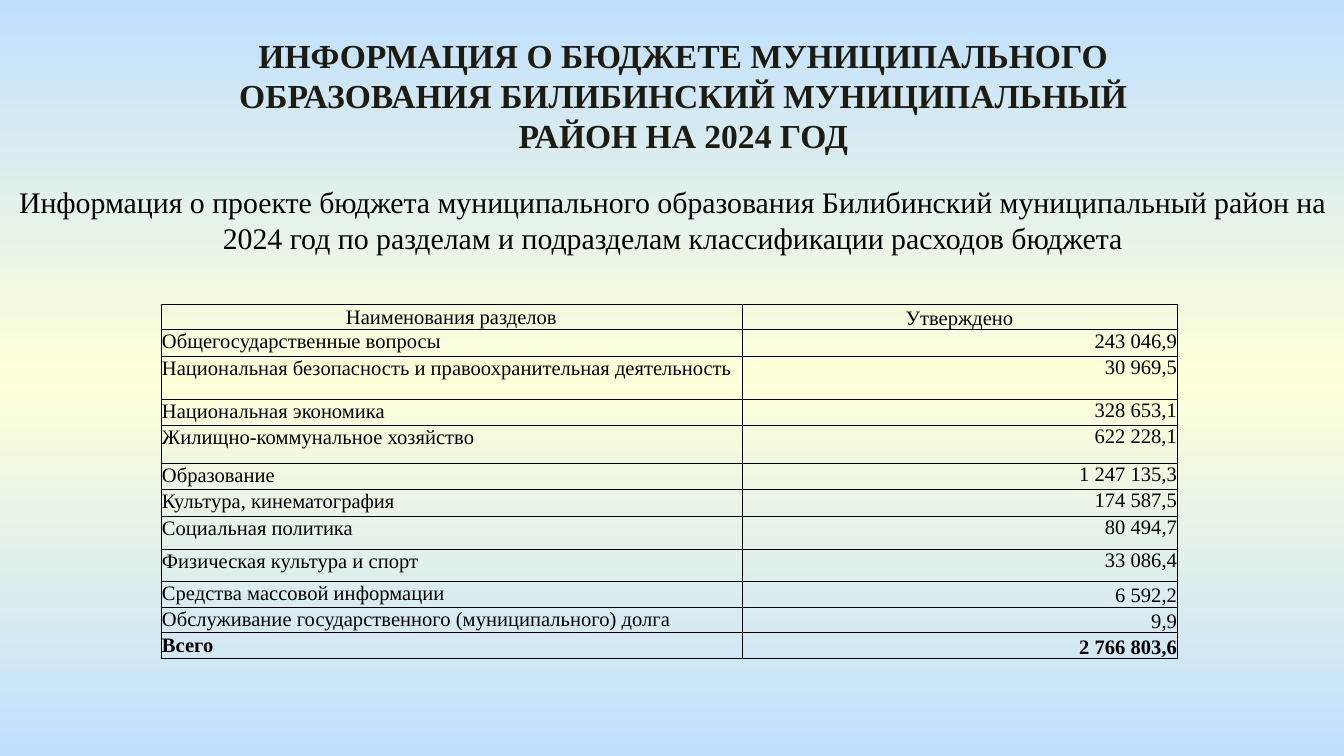
from dataclasses import dataclass

from lxml import etree
from pptx import Presentation
from pptx.dml.color import RGBColor
from pptx.enum.text import MSO_ANCHOR, MSO_AUTO_SIZE, PP_ALIGN
from pptx.oxml.ns import qn
from pptx.util import Pt

LEFT, CENTER, RIGHT = PP_ALIGN.LEFT, PP_ALIGN.CENTER, PP_ALIGN.RIGHT
TOP, MIDDLE, BOTTOM = MSO_ANCHOR.TOP, MSO_ANCHOR.MIDDLE, MSO_ANCHOR.BOTTOM
GROW = MSO_AUTO_SIZE.SHAPE_TO_FIT_TEXT

EMU_PER_PX = 914400 / 134.4


@dataclass(frozen=True)
class Theme:
    font: str = "Times New Roman"
    title_color: str = "1E1C11"
    text_color: str = "000000"
    border_color: str = "000000"
    sky: str = "C1E0FF"
    cream: str = "FFFFD9"
    title_size: int = 18
    subtitle_size: int = 16
    table_size: int = 11
    border_width: float = 0.5


THEME = Theme()

TITLE = ("ИНФОРМАЦИЯ О БЮДЖЕТЕ МУНИЦИПАЛЬНОГО ОБРАЗОВАНИЯ "
         "БИЛИБИНСКИЙ МУНИЦИПАЛЬНЫЙ РАЙОН НА 2024 ГОД")
SUBTITLE = ("Информация о проекте бюджета муниципального образования "
            "Билибинский муниципальный район на 2024 год по разделам "
            "и подразделам классификации расходов бюджета")

HEADINGS = ("Наименования разделов", "Утверждено")
HEADING_HEIGHT = 25
COLUMN_WIDTHS = (581, 435)
# Section, approved amount, row height, anchor of the amount
SECTIONS = [
    ("Общегосударственные вопросы", "243 046,9", 27, TOP),
    ("Национальная безопасность и правоохранительная деятельность",
     "30 969,5", 43, TOP),
    ("Национальная экономика", "328 653,1", 25, TOP),
    ("Жилищно-коммунальное хозяйство", "622 228,1", 38, TOP),
    ("Образование", "1 247 135,3", 26, TOP),
    ("Культура, кинематография", "174 587,5", 27, TOP),
    ("Социальная политика", "80 494,7", 33, TOP),
    ("Физическая культура и спорт", "33 086,4", 32, TOP),
    ("Средства массовой информации", "6 592,2", 26, BOTTOM),
    ("Обслуживание государственного (муниципального) долга",
     "9,9", 25, BOTTOM),
    ("Всего", "2 766 803,6", 26, BOTTOM),
]


def px(length):
    return round(length * EMU_PER_PX)


def write_text(frame, text, *, size, color=THEME.text_color, bold=False,
               align=LEFT):
    paragraph = frame.paragraphs[0]
    paragraph.alignment = align
    run = paragraph.add_run()
    run.text = text
    run.font.name = THEME.font
    run.font.size = Pt(size)
    run.font.bold = bold
    run.font.color.rgb = RGBColor.from_string(color)


def paint_background(slide):
    """Fill the slide with a vertical sky, cream, sky gradient."""
    fill = slide.background.fill
    fill.gradient()
    fill.gradient_angle = 270
    stops = next(slide.background._cSld.iter(qn("a:gsLst")))
    for stop in list(stops):
        stops.remove(stop)
    for percent, color in ((0, THEME.sky), (50, THEME.cream), (100, THEME.sky)):
        stop = etree.SubElement(stops, qn("a:gs"), pos=str(percent * 1000))
        etree.SubElement(stop, qn("a:srgbClr"), val=color)


def add_heading(slide, text, left, top, width, height, **text_format):
    frame = slide.shapes.add_textbox(
        px(left), px(top), px(width), px(height)).text_frame
    frame.word_wrap = True
    frame.auto_size = GROW
    write_text(frame, text, align=CENTER, **text_format)


def draw_borders(cell):
    properties = cell._tc.get_or_add_tcPr()
    for position, side in enumerate(("lnL", "lnR", "lnT", "lnB")):
        line = etree.Element(qn(f"a:{side}"), w=str(Pt(THEME.border_width)))
        fill = etree.SubElement(line, qn("a:solidFill"))
        etree.SubElement(fill, qn("a:srgbClr"), val=THEME.border_color)
        properties.insert(position, line)


def fill_cell(cell, text, *, inset=0, anchor=TOP, **text_format):
    cell.margin_left = cell.margin_right = cell.margin_top = px(inset)
    cell.margin_bottom = 0
    cell.vertical_anchor = anchor
    cell.fill.background()
    draw_borders(cell)
    write_text(cell.text_frame, text, size=THEME.table_size, **text_format)


def add_budget_table(slide, left, top):
    heights = [HEADING_HEIGHT] + [height for _, _, height, _ in SECTIONS]
    table = slide.shapes.add_table(
        len(heights), len(COLUMN_WIDTHS), px(left), px(top),
        px(sum(COLUMN_WIDTHS)), px(sum(heights))).table
    table.first_row = table.horz_banding = False
    for column, width in zip(table.columns, COLUMN_WIDTHS):
        column.width = px(width)
    for row, height in zip(table.rows, heights):
        row.height = px(height)

    for column, (heading, anchor) in enumerate(zip(HEADINGS, (MIDDLE, BOTTOM))):
        fill_cell(table.cell(0, column), heading, inset=1, anchor=anchor,
                  align=CENTER)
    for row, (section, amount, _, anchor) in enumerate(SECTIONS, start=1):
        is_total = row == len(SECTIONS)
        fill_cell(table.cell(row, 0), section, inset=1, bold=is_total)
        fill_cell(table.cell(row, 1), amount, anchor=anchor, bold=is_total,
                  align=RIGHT)


def main():
    presentation = Presentation()
    presentation.slide_width = px(1344)
    presentation.slide_height = px(756)
    slide = presentation.slides.add_slide(presentation.slide_layouts[6])

    paint_background(slide)
    add_heading(slide, TITLE, 164, 28, 1039, 136, size=THEME.title_size,
                color=THEME.title_color, bold=True)
    add_heading(slide, SUBTITLE, 1, 177, 1344, 86, size=THEME.subtitle_size)
    add_budget_table(slide, 161, 304)

    presentation.save("out.pptx")


if __name__ == "__main__":
    main()
